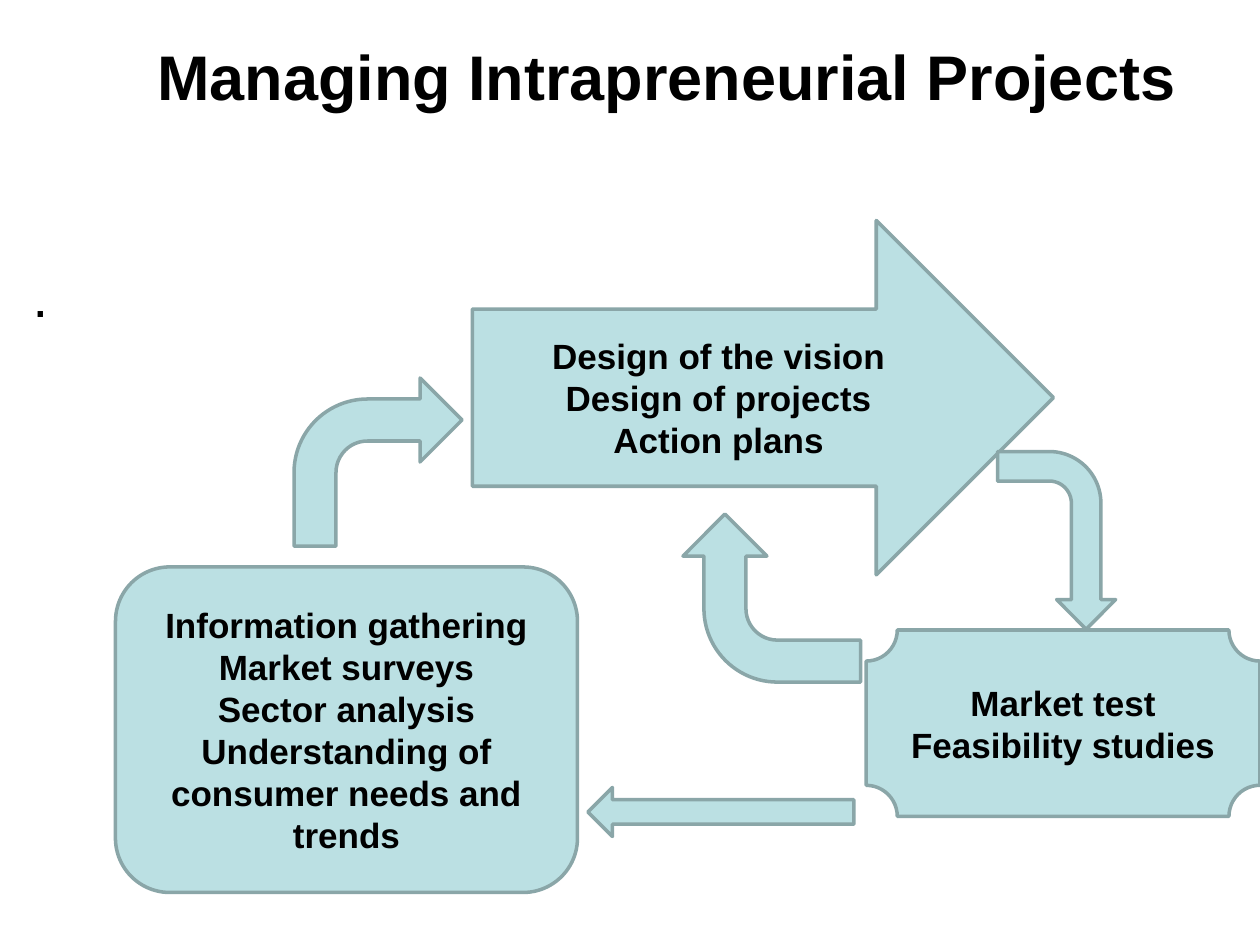
from lxml.etree import SubElement
from pptx import Presentation
from pptx.dml.color import RGBColor
from pptx.enum.shapes import MSO_SHAPE
from pptx.enum.text import MSO_ANCHOR, PP_ALIGN
from pptx.oxml.ns import qn
from pptx.util import Pt

BLACK = RGBColor(0x00, 0x00, 0x00)
PALE_TEAL = RGBColor(0xBB, 0xE0, 0xE3)
GREY_TEAL = RGBColor(0x8A, 0xA6, 0xA8)

# Content: frames are left, top, width, height in points
TITLE = ("Managing Intrapreneurial Projects", (60, 18, 642, 90))
BODY = (".", (11.5, 146, 708.5, 382.5))
STAGES = [
    (MSO_SHAPE.ROUNDED_RECTANGLE, (66, 324, 264, 186),
     ["Information gathering", "Market surveys", "Sector analysis",
      "Understanding of consumer needs and trends"]),
    (MSO_SHAPE.RIGHT_ARROW, (270, 126, 332, 202.5),
     ["Design of the vision", "Design of projects", "Action plans"]),
    (MSO_SHAPE.PLAQUE, (495, 360, 225, 106.5),
     ["Market test", "Feasibility studies"]),
]
FLOW_ARROWS = [
    (MSO_SHAPE.BENT_ARROW, (168, 216, 96, 96), 0),
    (MSO_SHAPE.BENT_ARROW, (553, 275, 101.5, 67.5), 90),
    (MSO_SHAPE.BENT_ARROW, (393, 291, 96, 101.5), 270),
    (MSO_SHAPE.LEFT_ARROW, (336, 450, 152, 28), 0),
]

TITLE_FONT = {"name": "Arial", "size": Pt(36), "bold": True}
BODY_FONT = {"name": "Arial", "size": Pt(32), "bold": False}
STAGE_FONT = {"name": "Arial", "size": Pt(20), "bold": True}


def format_text(para, font_values, alignment):
    para.alignment = alignment
    for name, value in font_values.items():
        setattr(para.font, name, value)
    para.font.color.rgb = BLACK


def fill_placeholder(box, content, font_values, alignment):
    text, frame = content
    box.left, box.top, box.width, box.height = map(Pt, frame)
    box.text_frame.text = text
    box.text_frame.vertical_anchor = MSO_ANCHOR.TOP
    para = box.text_frame.paragraphs[0]
    para.space_before = Pt(0)
    return para, font_values, alignment


def add_block(page, kind, frame):
    block = page.shapes.add_shape(kind, *map(Pt, frame))
    block.shadow.inherit = False
    block.fill.solid()
    block.fill.fore_color.rgb = PALE_TEAL
    block.line.color.rgb = GREY_TEAL
    block.line.width = Pt(2)
    return block


deck = Presentation()
deck.slide_width, deck.slide_height = Pt(720), Pt(540)
page = deck.slides.add_slide(deck.slide_layouts[1])

# Title and body
format_text(*fill_placeholder(page.shapes.title, TITLE, TITLE_FONT, PP_ALIGN.CENTER))
body_text = fill_placeholder(page.placeholders[1], BODY, BODY_FONT, PP_ALIGN.LEFT)
properties = body_text[0]._p.get_or_add_pPr()
properties.set("marL", str(Pt(27)))
properties.set("indent", str(Pt(-27)))
SubElement(properties, qn("a:buNone"))
format_text(*body_text)

# Project stages
for kind, frame, lines in STAGES:
    stage = add_block(page, kind, frame)
    stage.text_frame.word_wrap = True
    stage.text_frame.vertical_anchor = MSO_ANCHOR.MIDDLE
    stage.text_frame.text = "\n".join(lines)
    for para in stage.text_frame.paragraphs:
        format_text(para, STAGE_FONT, PP_ALIGN.CENTER)

# Arrows between the stages
for kind, frame, rotation in FLOW_ARROWS:
    add_block(page, kind, frame).rotation = rotation

deck.save("out.pptx")
